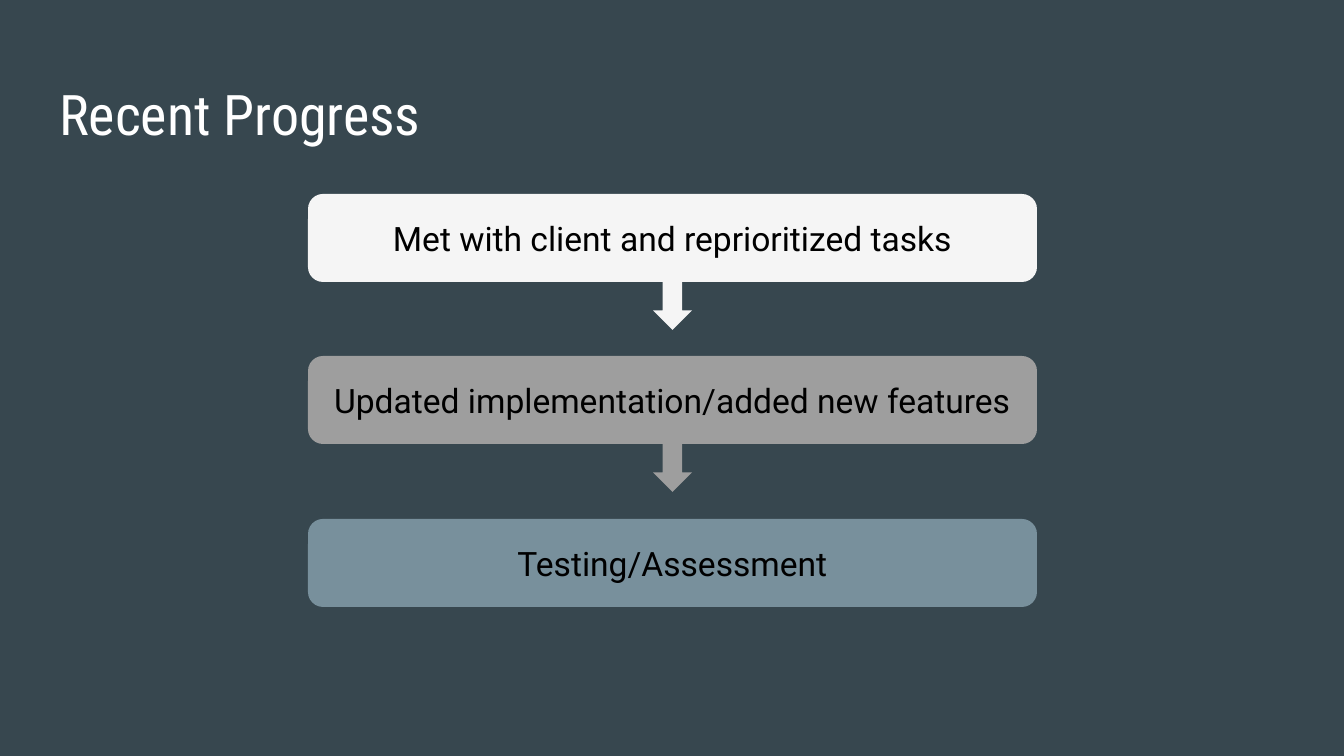
from pptx import Presentation
from pptx.dml.color import RGBColor
from pptx.enum.shapes import MSO_SHAPE as Shape
from pptx.enum.text import MSO_ANCHOR as Anchor, PP_ALIGN as Align
from pptx.util import Emu, Pt

SCALE = 914400 / 134.4  # EMU per px
SLATE = RGBColor(0x37, 0x47, 0x4F)
WHITE = RGBColor(0xFF, 0xFF, 0xFF)
BLACK = RGBColor(0x00, 0x00, 0x00)
PALE = RGBColor(0xF5, 0xF5, 0xF5)
GREY = RGBColor(0x9E, 0x9E, 0x9E)
BLUE_GREY = RGBColor(0x78, 0x90, 0x9C)

TITLE_FONT = {"name": "Roboto Condensed", "size": Pt(30), "color": WHITE}
STEP_FONT = {"name": "Roboto", "size": Pt(18), "color": BLACK}


def px(*lengths):
    return [Emu(round(length * SCALE)) for length in lengths]


def write(shape, text, font_format, align, anchor):
    frame = shape.text_frame
    frame.word_wrap = True
    frame.vertical_anchor = anchor
    for side in ("left", "top", "right", "bottom"):
        setattr(frame, f"margin_{side}", Pt(7.2))
    paragraph = frame.paragraphs[0]
    paragraph.alignment = align
    run = paragraph.add_run()
    run.text = text
    for key, value in font_format.items():
        if key == "color":
            run.font.color.rgb = value
        else:
            setattr(run.font, key, value)


presentation = Presentation()
presentation.slide_width, presentation.slide_height = px(1344, 756)
slide = presentation.slides.add_slide(presentation.slide_layouts[6])
slide.background.fill.solid()
slide.background.fill.fore_color.rgb = SLATE

# Title
title = slide.shapes.add_textbox(*px(46, 66, 1253, 85))
write(title, "Recent Progress", TITLE_FONT, Align.LEFT, Anchor.TOP)

# Steps, each but the last with an arrow below it
STEPS = [
    ("Met with client and reprioritized tasks", PALE),
    ("Updated implementation/added new features", GREY),
    ("Testing/Assessment", BLUE_GREY),
]
FIRST_TOP, LAST_TOP, BOX_HEIGHT = 194, 519, 88
last = len(STEPS) - 1
for index, (text, color) in enumerate(STEPS):
    top = FIRST_TOP + index * (LAST_TOP - FIRST_TOP) // last
    box = slide.shapes.add_shape(Shape.ROUNDED_RECTANGLE, *px(308, top, 729, BOX_HEIGHT))
    box.adjustments[0] = 0.17
    write(box, text, STEP_FONT, Align.CENTER, Anchor.MIDDLE)
    parts = [box]
    if index < last:
        parts.append(slide.shapes.add_shape(Shape.DOWN_ARROW, *px(653, top + BOX_HEIGHT, 39, 48)))
    for part in parts:
        part.shadow.inherit = False
        part.fill.solid()
        part.fill.fore_color.rgb = color
        part.line.fill.background()

presentation.save("out.pptx")
